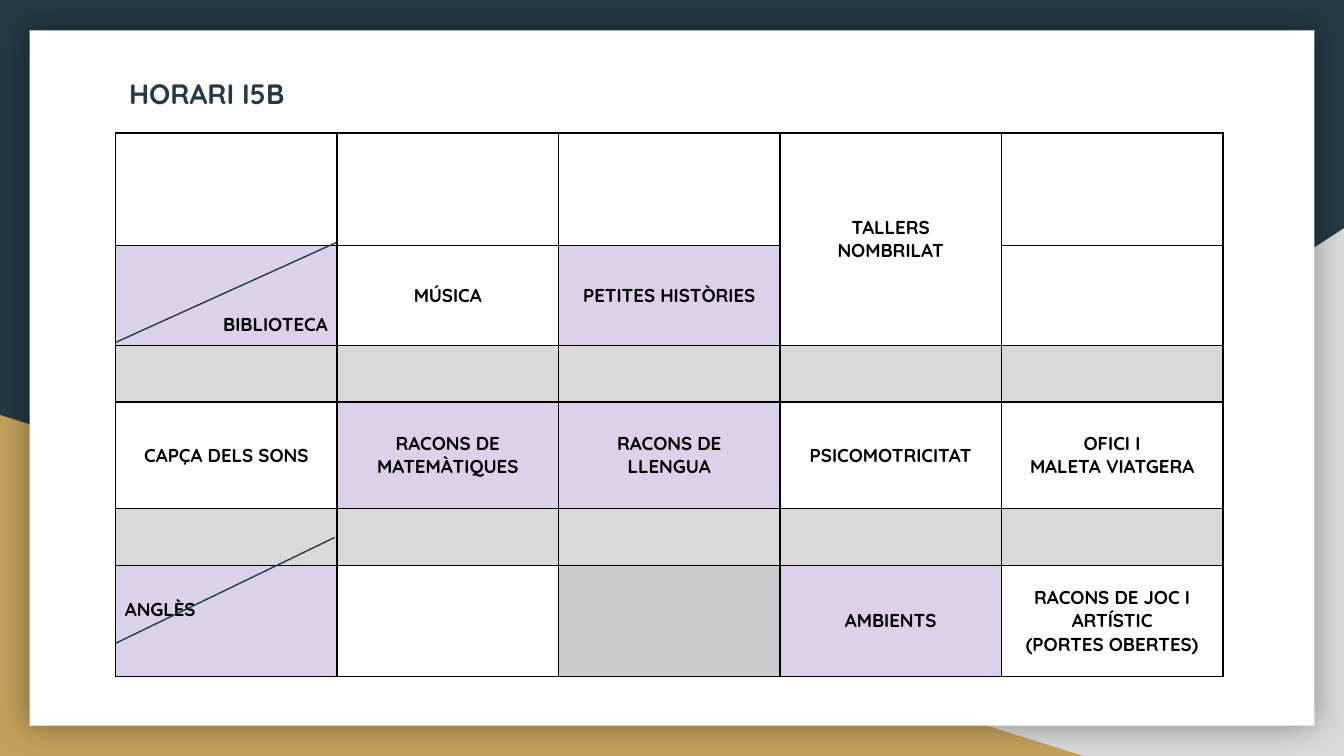
from dataclasses import dataclass

from lxml.etree import SubElement
from pptx import Presentation
from pptx.dml.color import RGBColor
from pptx.enum.shapes import MSO_CONNECTOR, MSO_SHAPE
from pptx.enum.text import MSO_ANCHOR as Anchor, MSO_AUTO_SIZE, PP_ALIGN as Align
from pptx.oxml.ns import qn
from pptx.util import Inches, Pt

WIDTH = Inches(10)
HEIGHT = WIDTH * 9 // 16
FONT = "Quicksand"
NAVY, GOLD, SILVER = "233A44", "C4A15A", "D9D9D9"
WHITE, BLACK, LILAC, GREY = "FFFFFF", "000000", "D9D2E9", "CCCCCC"
ROW_SHARES = [14.9, 13.2, 7.5, 14.1, 7.5, 14.7]
COLUMNS = 5
PADDING = Inches(0.07)


@dataclass
class Area:
    """Left, top, width and height in percent of the slide."""
    left: float
    top: float
    width: float
    height: float

    def lengths(self) -> tuple:
        return across(self.left), down(self.top), across(self.width), down(self.height)


@dataclass
class Panel:
    kind: MSO_SHAPE
    area: Area
    fill: str
    flipped: bool = False
    shadowed: bool = False


@dataclass
class Lesson:
    row: int
    column: int
    lines: tuple = ()
    fill: str = WHITE
    align: Align = Align.CENTER
    anchor: Anchor = Anchor.MIDDLE
    top: int = PADDING


@dataclass
class Diagonal:
    """Start and end in percent of the slide."""
    start: tuple
    end: tuple


PANELS = [
    Panel(MSO_SHAPE.RIGHT_TRIANGLE, Area(39.2, 30.2, 60.8, 69.8), SILVER, flipped=True),
    Panel(MSO_SHAPE.RIGHT_TRIANGLE, Area(0, 54.9, 80.6, 45.1), GOLD),
    Panel(MSO_SHAPE.RECTANGLE, Area(2.2, 4, 95.6, 92), WHITE, shadowed=True),
]
BREAKS = [Lesson(row, column, fill=SILVER) for row in (2, 4) for column in range(COLUMNS)]
LESSONS = BREAKS + [
    Lesson(0, 3, ("TALLERS", "NOMBRILAT")),
    Lesson(1, 0, ("BIBLIOTECA",), LILAC, Align.RIGHT, Anchor.BOTTOM),
    Lesson(1, 1, ("MÚSICA",)),
    Lesson(1, 2, ("PETITES HISTÒRIES",), LILAC),
    Lesson(3, 0, ("CAPÇA DELS SONS",)),
    Lesson(3, 1, ("RACONS DE MATEMÀTIQUES",), LILAC),
    Lesson(3, 2, ("RACONS DE", "LLENGUA"), LILAC),
    Lesson(3, 3, ("PSICOMOTRICITAT",)),
    Lesson(3, 4, ("OFICI I", "MALETA VIATGERA")),
    Lesson(5, 0, ("ANGLÈS",), LILAC, Align.LEFT, Anchor.TOP, Inches(0.24)),
    Lesson(5, 2, fill=GREY),
    Lesson(5, 3, ("AMBIENTS",), LILAC),
    Lesson(5, 4, ("RACONS DE JOC I ARTÍSTIC", "(PORTES OBERTES)")),
]
DIAGONALS = [
    Diagonal((8.6, 85.1), (24.9, 71.1)),
    Diagonal((8.6, 45.3), (25, 32.1)),
]


def across(percent: float) -> int:
    return round(WIDTH * percent / 100)


def down(percent: float) -> int:
    return round(HEIGHT * percent / 100)


def paint(target, color: str) -> None:
    """Give a fill one solid colour."""
    target.solid()
    target.fore_color.rgb = RGBColor.from_string(color)


def add_span(para, text: str, size: float, color: str) -> None:
    span = para.add_run()
    span.text = text
    span.font.name = FONT
    span.font.size = Pt(size)
    span.font.bold = True
    span.font.color.rgb = RGBColor.from_string(color)


def add_panel(page, panel: Panel) -> None:
    box = page.shapes.add_shape(panel.kind, *panel.area.lengths())
    box.shadow.inherit = False
    paint(box.fill, panel.fill)
    box.line.fill.background()
    properties = box.element.spPr
    if panel.flipped:
        properties.find(qn("a:xfrm")).set("flipH", "1")
    if panel.shadowed:
        effects = properties.find(qn("a:effectLst"))
        shadow = SubElement(effects, qn("a:outerShdw"), blurRad=str(Pt(18)), dist="0",
                            algn="ctr", rotWithShape="0")
        tint = SubElement(shadow, qn("a:srgbClr"), val=BLACK)
        SubElement(tint, qn("a:alpha"), val="40000")


def add_borders(cell) -> None:
    properties = cell._tc.get_or_add_tcPr()
    for side in ("lnL", "lnR", "lnT", "lnB"):
        border = SubElement(properties, qn(f"a:{side}"), w=str(Pt(1)))
        fill = SubElement(border, qn("a:solidFill"))
        SubElement(fill, qn("a:srgbClr"), val=BLACK)


def fill_cell(cell, lesson: Lesson) -> None:
    paint(cell.fill, lesson.fill)
    cell.vertical_anchor = lesson.anchor
    cell.margin_left = cell.margin_right = cell.margin_bottom = PADDING
    cell.margin_top = lesson.top
    for index, line in enumerate(lesson.lines):
        frame = cell.text_frame
        para = frame.add_paragraph() if index else frame.paragraphs[0]
        para.alignment = lesson.align
        add_span(para, line, 10, BLACK)


def add_timetable(page) -> None:
    area = Area(8.6, 17.6, 82.4, sum(ROW_SHARES))
    table = page.shapes.add_table(len(ROW_SHARES), COLUMNS, *area.lengths()).table
    table.first_row = table.horz_banding = False
    for row, share in zip(table.rows, ROW_SHARES):
        row.height = down(share)
    for cell in table.iter_cells():
        add_borders(cell)
        paint(cell.fill, WHITE)
        cell.margin_top = cell.margin_bottom = 0
    table.cell(0, 3).merge(table.cell(1, 3))
    for lesson in LESSONS:
        cell = table.cell(lesson.row, lesson.column)
        if lesson.lines:
            fill_cell(cell, lesson)
        else:
            paint(cell.fill, lesson.fill)


def place_title(page, text: str) -> None:
    title = page.shapes.title
    title.left, title.top, title.width, title.height = Area(8.6, 8.3, 18.5, 8).lengths()
    frame = title.text_frame
    frame.auto_size = MSO_AUTO_SIZE.NONE
    frame.word_wrap = True
    frame.vertical_anchor = Anchor.MIDDLE
    frame.margin_left = frame.margin_right = Inches(0.1)
    para = frame.paragraphs[0]
    para.alignment = Align.LEFT
    add_span(para, text, 15, NAVY)
    page.shapes.element.append(title.element)  # bring in front of the card


def add_diagonal(page, diagonal: Diagonal) -> None:
    (x1, y1), (x2, y2) = diagonal.start, diagonal.end
    line = page.shapes.add_connector(MSO_CONNECTOR.STRAIGHT, across(x1), down(y1),
                                     across(x2), down(y2))
    line.line.width = Pt(0.75)
    line.line.color.rgb = RGBColor.from_string(NAVY)
    SubElement(line.element.spPr, qn("a:effectLst"))


def main() -> None:
    deck = Presentation()
    deck.slide_width, deck.slide_height = WIDTH, HEIGHT
    page = deck.slides.add_slide(deck.slide_layouts.get_by_name("Title Only"))
    paint(page.background.fill, NAVY)
    for panel in PANELS:
        add_panel(page, panel)
    add_timetable(page)
    place_title(page, "HORARI I5B")
    for diagonal in DIAGONALS:
        add_diagonal(page, diagonal)
    deck.save("out.pptx")


if __name__ == "__main__":
    main()
